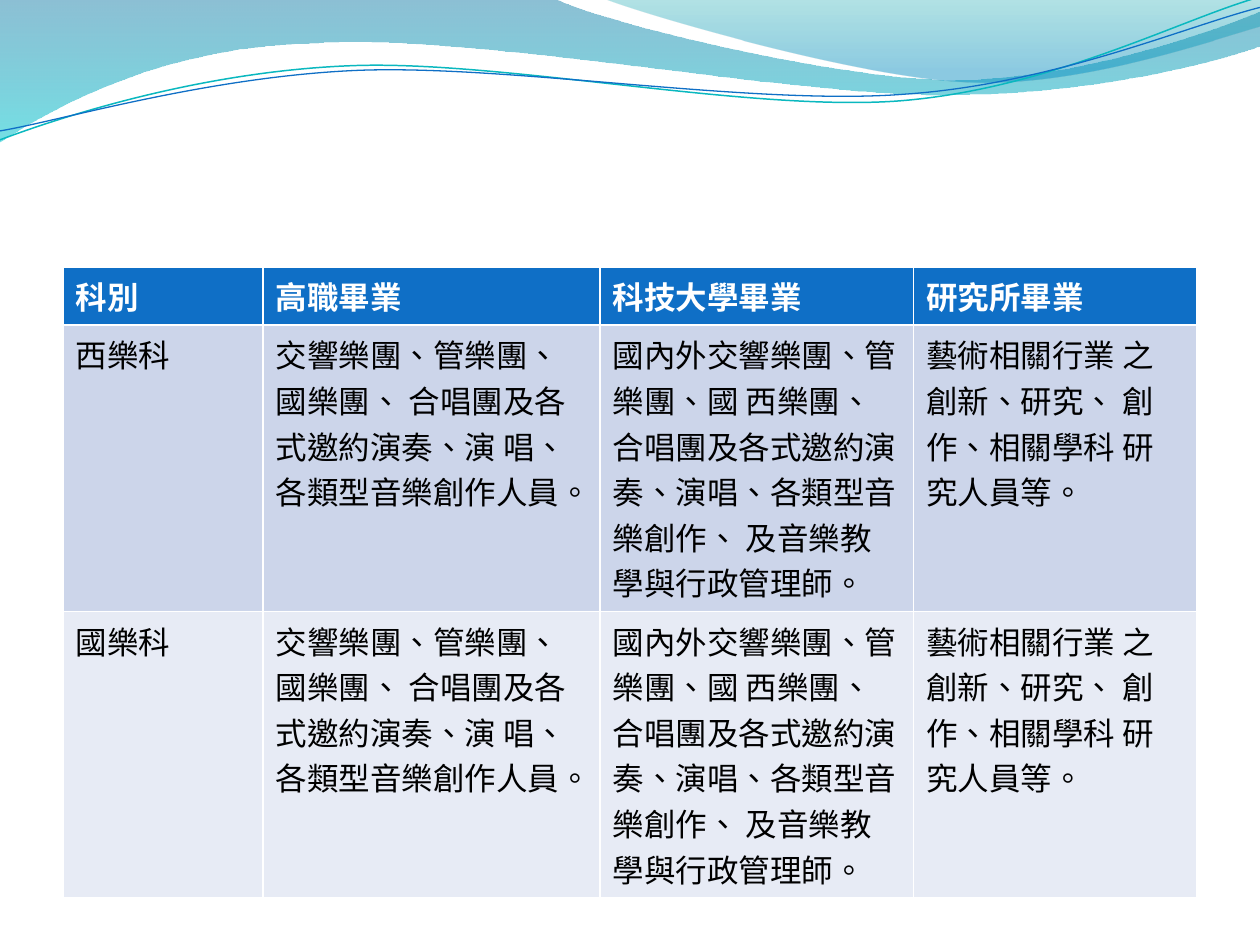
from lxml import etree
from pptx import Presentation
from pptx.dml.color import RGBColor
from pptx.enum.lang import MSO_LANGUAGE_ID
from pptx.oxml.ns import qn
from pptx.util import Cm, Pt

WHITE = RGBColor(0xFF, 0xFF, 0xFF)
BLACK = RGBColor(0x00, 0x00, 0x00)
BLUE = RGBColor(0x0F, 0x6F, 0xC6)
TEAL = RGBColor(0x0A, 0xB8, 0xBF)
ROW_FILLS = [BLUE, RGBColor(0xCC, 0xD5, 0xEA), RGBColor(0xE7, 0xEB, 0xF5)]
FONT = "TeX Gyre Pagella"

# Gradient stops: position, colour, opacity in percent
DEEP_GRADIENT = [(0, RGBColor(0x00, 0x74, 0xA1), 45),
                 (1, RGBColor(0x00, 0xC6, 0xCF), 55)]
LIGHT_GRADIENT = [(0, RGBColor(0x00, 0xA1, 0xA9), 30),
                  (0.8, RGBColor(0x00, 0x8B, 0xBF), 45)]

# Outlines in cm: one pair is a line end, three pairs are a Bezier segment
DEEP_WAVE = [
    [(0, 0)], [(11.18, -0.03)],
    [(12.09, 0.43), (16.87, 1.6), (19.25, 1.6)],
    [(21.67, 1.6), (24.33, 0.66), (25.4, 0.23)],
    [(25.43, 0.91)],
    [(24.97, 1.12), (22.1, 1.93), (18.95, 1.91)],
    [(15.8, 1.91), (9.7, 0.71), (6.53, 0.86)],
    [(3.28, 0.91), (1.17, 2.11), (-0.03, 2.87)],
]
LIGHT_WAVE = [
    [(12.17, -0.03)],
    [(12.93, 0.28), (17.32, 1.57), (19.53, 1.65)],
    [(21.74, 1.75), (24.41, 0.81), (25.4, 0.53)],
    [(25.4, 0)],
]
# The two curves are drawn level, then tilted
CURVE_TILT = -2.7
TEAL_CURVE = [
    [(-0.05, 2.22)],
    [(1.19, 1.82), (4.02, 1.04), (7.05, 1.06)],
    [(10.05, 1.07), (15.02, 2.37), (18.08, 2.29)],
    [(21.13, 2.2), (23.86, 0.91), (25.41, 0.55)],
]
BLUE_CURVE = [
    [(-0.04, 2.04)],
    [(1.16, 1.9), (4.17, 1.15), (7.2, 1.16)],
    [(10.25, 1.18), (15.13, 2.25), (18.19, 2.16)],
    [(21.21, 2.1), (23.93, 1.06), (25.45, 0.75)],
]

HEADER = ["科別", "高職畢業", "科技大學畢業", "研究所畢業"]
CAREERS = [
    "交響樂團、管樂團、國樂團、 合唱團及各式邀約演奏、演 唱、各類型音樂創作人員。",
    "國內外交響樂團、管樂團、國 西樂團、合唱團及各式邀約演 奏、演唱、各類型音樂創作、 及音樂教學與行政管理師。",
    "藝術相關行業 之創新、研究、 創作、相關學科 研究人員等。",
]
ROWS = [HEADER] + [[dept] + CAREERS for dept in ("西樂科", "國樂科")]
COL_WIDTHS = [4.03, 6.8, 6.32, 5.71]
MIN_ROW_HEIGHT = 1.03


def add_outline(shapes, left, top, outline, close):
    """Lay every point as a line end, then merge triples into Bezier segments."""
    points = [(left + Cm(x), top + Cm(y)) for part in outline for x, y in part]
    builder = shapes.build_freeform(*points[0])
    builder.add_line_segments(points[1:], close=close)
    sp = builder.convert_to_shape()
    sp.shadow.inherit = False
    line_ends = iter(list(sp._element.iter(qn("a:lnTo"))))
    for part in outline[1:]:
        first, *others = [next(line_ends) for _ in part]
        if others:
            first.tag = qn("a:cubicBezTo")
            for end in others:
                first.append(end[0])
                end.getparent().remove(end)
    return sp


def add_wave(slide, left, top, outline, gradient):
    sp = add_outline(slide.shapes, left, top, outline, True)
    sp.line.fill.background()
    sp.fill.gradient()
    sp.fill.gradient_angle = 270
    for stop, (position, color, _) in zip(sp.fill.gradient_stops, gradient):
        stop.position = position
        stop.color.rgb = color
    for clr, (_, _, opacity) in zip(sp._element.spPr.iter(qn("a:srgbClr")), gradient):
        etree.SubElement(clr, qn("a:alpha"), val=str(opacity * 1000))


def add_curve(group, left, top, outline, color, width):
    sp = add_outline(group.shapes, left, top, outline, False)
    sp.rotation = CURVE_TILT
    sp.fill.background()
    sp.line.color.rgb = color
    sp.line.width = Pt(width)


def add_banner(slide, left, top):
    add_wave(slide, left, top, DEEP_WAVE, DEEP_GRADIENT)
    add_wave(slide, left, top, LIGHT_WAVE, LIGHT_GRADIENT)
    curves = slide.shapes.add_group_shape()
    add_curve(curves, left, top, TEAL_CURVE, TEAL, 0.85)
    add_curve(curves, left, top, BLUE_CURVE, BLUE, 0.75)


def add_career_table(slide, left, top, width, height):
    """Rows start at their least height and grow with the text."""
    frame = slide.shapes.add_table(
        len(ROWS), len(HEADER), left, top, width, height)
    table = frame.table
    for col, col_width in zip(table.columns, COL_WIDTHS):
        col.width = Cm(col_width)
    for r, texts in enumerate(ROWS):
        table.rows[r].height = Cm(MIN_ROW_HEIGHT)
        for c, content in enumerate(texts):
            cell = table.cell(r, c)
            cell.fill.solid()
            cell.fill.fore_color.rgb = ROW_FILLS[r]
            cell.text = content
            p = cell.text_frame.paragraphs[0]
            p.runs[0].font.language_id = MSO_LANGUAGE_ID.TRADITIONAL_CHINESE
            p.font.name = FONT
            p.font.size = Pt(18)
            p.font.bold = r == 0
            p.font.color.rgb = WHITE if r == 0 else BLACK
    frame.height = height


def main():
    prs = Presentation()
    prs.slide_width, prs.slide_height = Cm(25.4), Cm(19.05)
    slide = prs.slides.add_slide(prs.slide_layouts[6])
    add_banner(slide, Cm(0), Cm(0))
    add_career_table(slide, Cm(1.27), Cm(5.38), Cm(sum(COL_WIDTHS)), Cm(10.69))
    prs.save("out.pptx")


if __name__ == "__main__":
    main()
